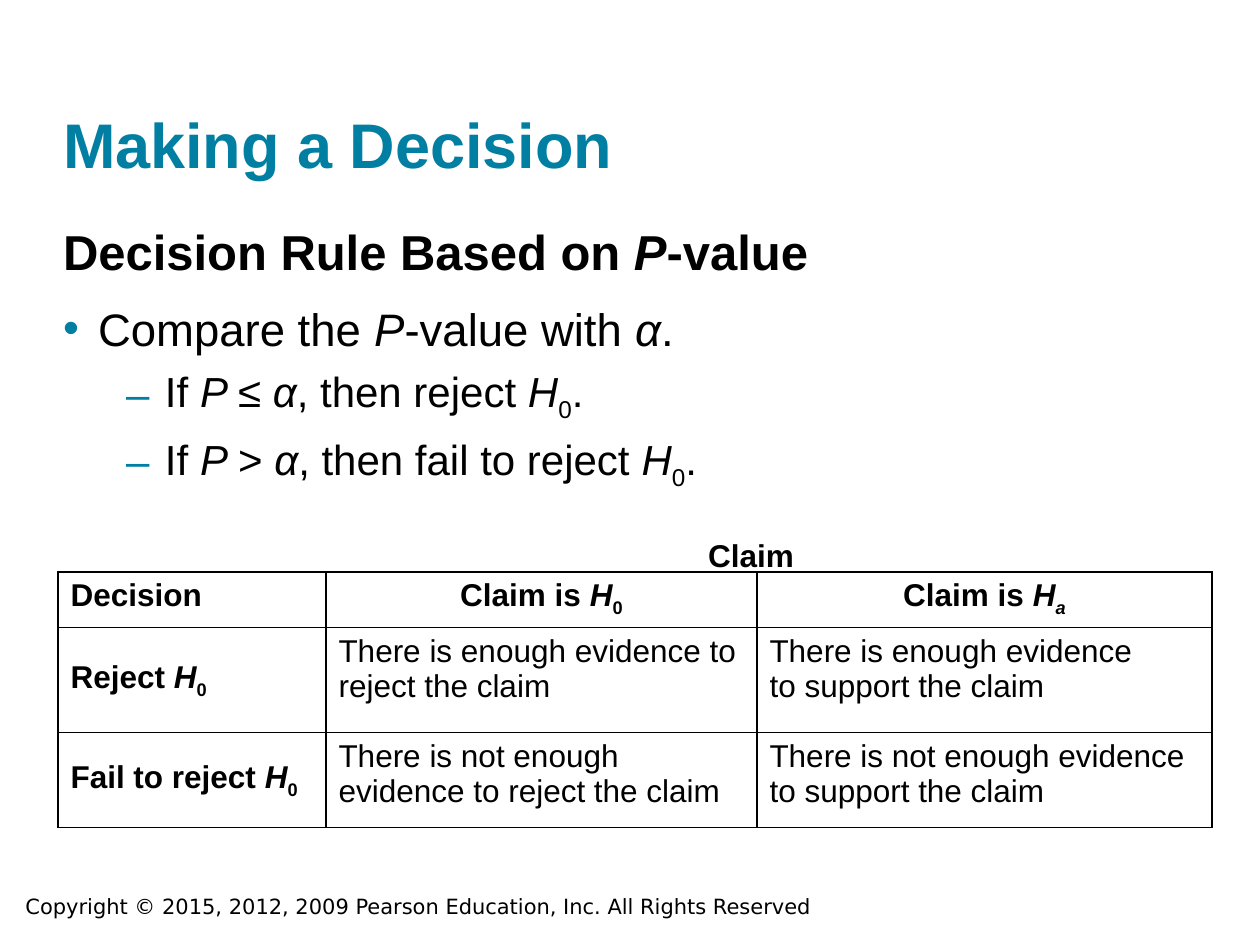
import pptx
import pptx.dml.color
import pptx.enum.text
import pptx.util
import lxml.etree
import pptx.oxml.ns

EMU_PER_PX = 914400 / 126
COLORS = {"accent": "007FA3", "ink": "000000", "paper": "FFFFFF"}
ALIGN = pptx.enum.text.PP_ALIGN
ANCHOR = pptx.enum.text.MSO_ANCHOR
qn = pptx.oxml.ns.qn


def px(count):
    return pptx.util.Emu(round(count * EMU_PER_PX))


# Segments are split by "|"; a leading "*" means italic, "~" means subscript.
def write(frame, text, size=18, color="ink", bold=False, font="Arial", align=ALIGN.LEFT,
          first=True, before=0, level=0, bullet=None, margin=0, hang=0):
    paragraph = frame.paragraphs[0] if first else frame.add_paragraph()
    paragraph.alignment = align
    paragraph.level = level
    paragraph.space_before = pptx.util.Pt(before)
    properties = paragraph._p.get_or_add_pPr()
    properties.set("marL", str(px(margin)))
    properties.set("indent", str(px(-hang)))
    if bullet:
        bullet_color = lxml.etree.SubElement(properties, qn("a:buClr"))
        lxml.etree.SubElement(bullet_color, qn("a:srgbClr"), val=COLORS["accent"])
        lxml.etree.SubElement(properties, qn("a:buFont"), typeface="Arial")
        lxml.etree.SubElement(properties, qn("a:buChar"), char=bullet)
    else:
        lxml.etree.SubElement(properties, qn("a:buNone"))
    for segment in text.split("|"):
        words = segment.lstrip("*~")
        marks = segment[:len(segment) - len(words)]
        run = paragraph.add_run()
        run.text = words
        run.font.name = font
        run.font.size = pptx.util.Pt(size)
        run.font.bold = bold
        run.font.italic = "*" in marks
        run.font.color.rgb = pptx.dml.color.RGBColor.from_string(COLORS[color])
        if "~" in marks:
            run._r.get_or_add_rPr().set("baseline", "-25000")


deck = pptx.Presentation()
deck.slide_width, deck.slide_height = px(1260), px(945)
slide = deck.slides.add_slide(deck.slide_layouts[3])
title, rules, claim = slide.placeholders

for holder, box, anchor in [
    (title, (63, 30, 1134, 151), ANCHOR.BOTTOM),
    (rules, (63, 221, 1134, 299), ANCHOR.TOP),
    (claim, (294, 536, 914, 32), ANCHOR.TOP),
]:
    holder.left, holder.top, holder.width, holder.height = map(px, box)
    frame = holder.text_frame
    frame.margin_left = frame.margin_top = frame.margin_right = frame.margin_bottom = 0
    frame.word_wrap = True
    frame.auto_size = pptx.enum.text.MSO_AUTO_SIZE.NONE
    frame.vertical_anchor = anchor

write(title.text_frame, "Making a Decision", size=36, color="accent", bold=True)
write(rules.text_frame, "Decision Rule Based on |*P|-value", size=28, bold=True, margin=35, hang=35)
write(rules.text_frame, "Compare the |*P|-value with |*α|.", size=26, first=False,
      before=12, bullet="•", margin=35, hang=35)
for rule in ["If |*P |≤ |*α|, then reject |*H|~0|.", "If |*P |> |*α|, then fail to reject |*H|~0|."]:
    write(rules.text_frame, rule, size=24, first=False, before=6, level=1,
          bullet="–", margin=102, hang=39)
write(claim.text_frame, "Claim", bold=True, align=ALIGN.CENTER)

copyright_line = slide.shapes.add_textbox(px(13), px(887), px(987), px(38)).text_frame
copyright_line.word_wrap = True
write(copyright_line, "Copyright © 2015, 2012, 2009 Pearson Education, Inc. All Rights Reserved",
      size=12, font="DejaVu Sans")

decisions = [
    ["Decision", "Claim is |*H|~0", "Claim is |*H|*~a"],
    ["Reject |*H|~0", "There is enough evidence to reject the claim",
     "There is enough evidence\nto support the claim"],
    ["Fail to reject |*H|~0", "There is not enough evidence to reject the claim",
     "There is not enough evidence to support the claim"],
]
column_widths = [268, 431, 455]
row_heights = [52, 105, 95]
table = slide.shapes.add_table(3, 3, px(58), px(572), px(sum(column_widths)), px(sum(row_heights))).table
table.first_row = table.horz_banding = False
for column, width in zip(table.columns, column_widths):
    column.width = px(width)
for row, height in zip(table.rows, row_heights):
    row.height = px(height)

for r, outcomes in enumerate(decisions):
    for c, outcome in enumerate(outcomes):
        cell = table.cell(r, c)
        cell.vertical_anchor = ANCHOR.MIDDLE if r and not c else ANCHOR.TOP
        cell_properties = cell._tc.get_or_add_tcPr()
        for side in ["lnL", "lnR", "lnT", "lnB"]:
            border = lxml.etree.SubElement(cell_properties, qn("a:" + side), w=str(pptx.util.Pt(1)))
            border_fill = lxml.etree.SubElement(border, qn("a:solidFill"))
            lxml.etree.SubElement(border_fill, qn("a:srgbClr"), val=COLORS["ink"])
        cell.fill.solid()
        cell.fill.fore_color.rgb = pptx.dml.color.RGBColor.from_string(COLORS["paper"])
        for i, line in enumerate(outcome.split("\n")):
            write(cell.text_frame, line, bold=r == 0 or c == 0, first=i == 0,
                  align=ALIGN.CENTER if r == 0 and c else ALIGN.LEFT)

deck.save("out.pptx")
